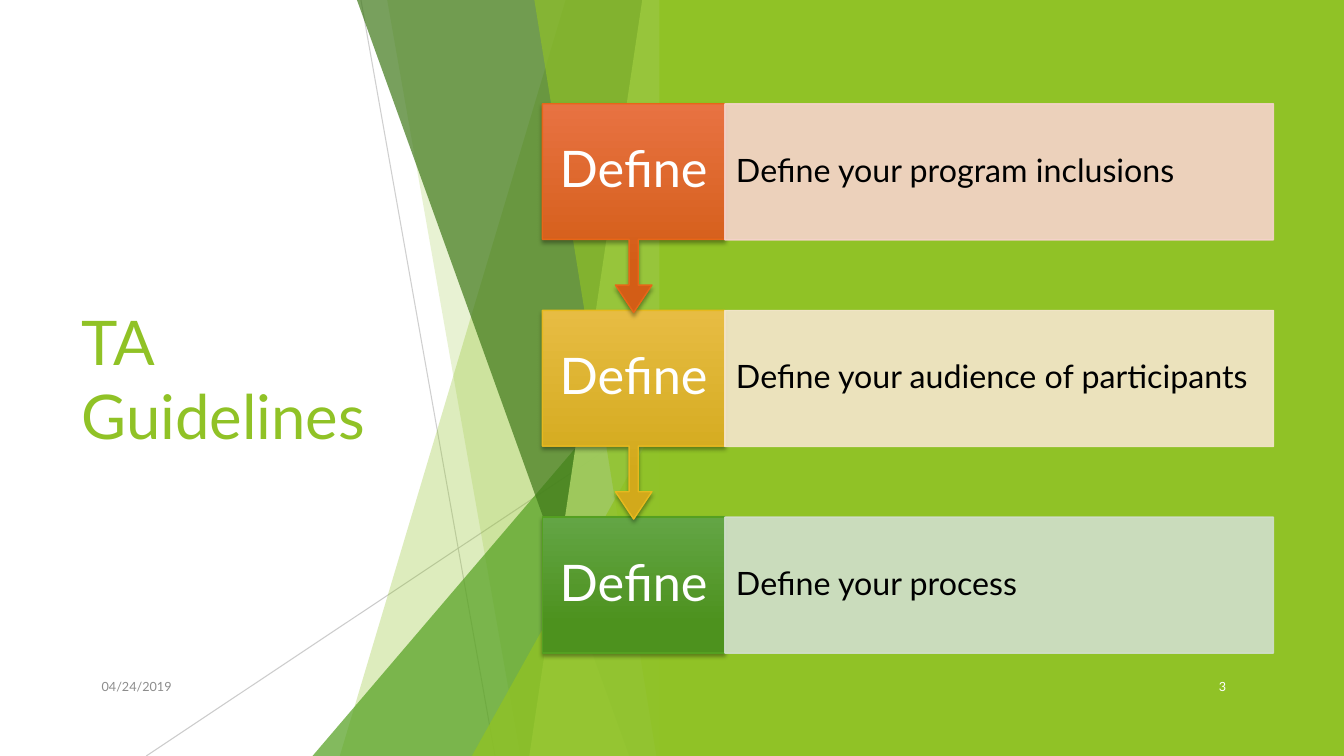
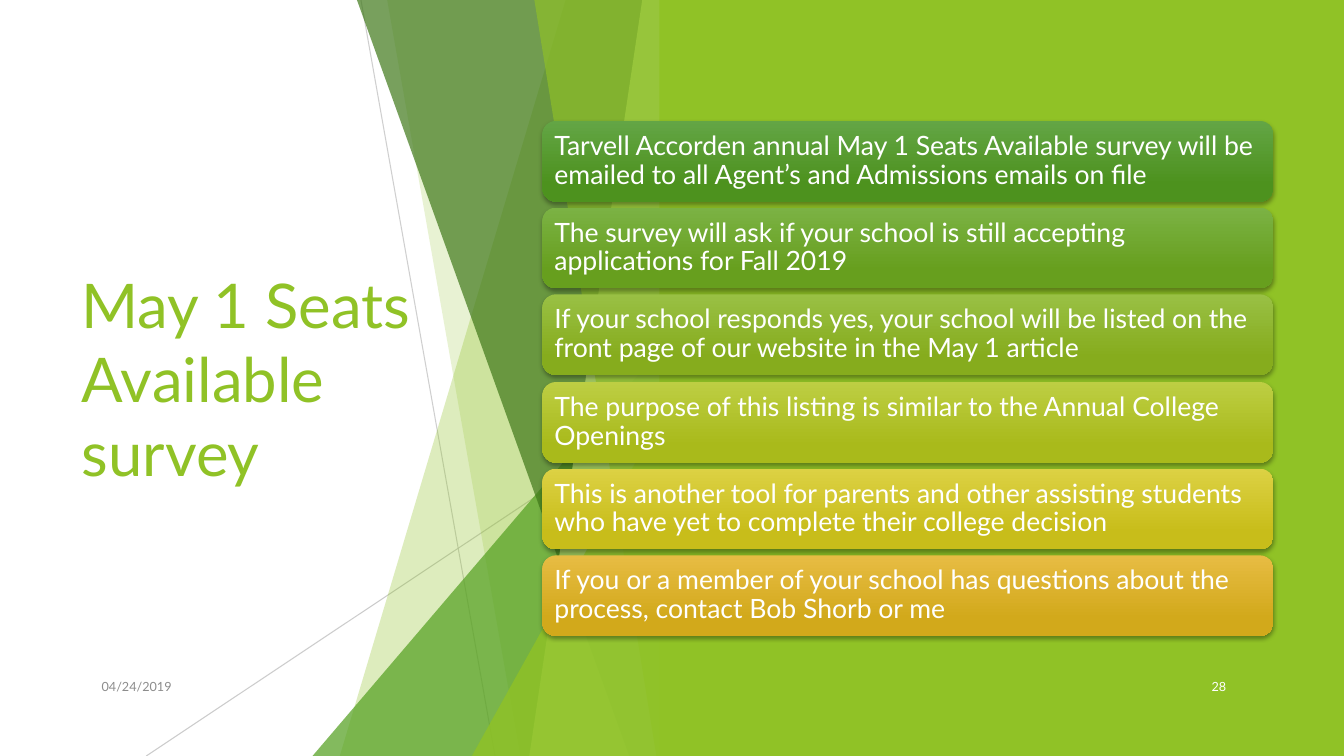
from dataclasses import dataclass

from lxml import etree
from pptx import Presentation
from pptx import util as u
from pptx.dml.color import RGBColor
from pptx.enum import shapes, text
from pptx.oxml.ns import qn
from pptx.shapes.base import BaseShape
from pptx.slide import Slide
from pptx.text.text import TextFrame

PX = 9144  # EMU per px, 100 px to the inch
WIDTH, HEIGHT = 1333, 750
FONT = "Lato"
TITLE_ONLY = 5

WHITE = RGBColor(0xFF, 0xFF, 0xFF)
BLACK = RGBColor(0x00, 0x00, 0x00)
LIME = RGBColor(0x90, 0xC2, 0x26)
LEAF = RGBColor(0x54, 0xA0, 0x21)
FOREST = RGBColor(0x3F, 0x78, 0x19)
PALE_LIME = RGBColor(0xC0, 0xE4, 0x74)
SILVER = RGBColor(0xBF, 0xBF, 0xBF)
GREY = RGBColor(0x8C, 0x8C, 0x8C)

Gradient = tuple[RGBColor, RGBColor]
GREEN_GRADIENT = (RGBColor(0x63, 0xA5, 0x45), RGBColor(0x4D, 0x92, 0x1E))
GRASS_GRADIENT = (RGBColor(0x7B, 0xB2, 0x44), RGBColor(0x67, 0x9F, 0x1E))
LIME_GRADIENT = (RGBColor(0x99, 0xC0, 0x44), RGBColor(0x86, 0xAC, 0x1D))
OLIVE_GRADIENT = (RGBColor(0xBD, 0xCE, 0x43), RGBColor(0xA9, 0xBA, 0x1B))
YELLOW_GRADIENT = (RGBColor(0xDC, 0xD1, 0x43), RGBColor(0xC8, 0xBD, 0x1A))
GOLD_GRADIENT = (RGBColor(0xE7, 0xBC, 0x43), RGBColor(0xD2, 0xA9, 0x1B))
ORANGE_GRADIENT = (RGBColor(0xE8, 0x72, 0x42), RGBColor(0xD3, 0x5D, 0x16))


@dataclass(frozen=True)
class Box:
    left: int
    top: int
    width: int
    height: int

    def emu(self) -> tuple[int, int, int, int]:
        return self.left * PX, self.top * PX, self.width * PX, self.height * PX


@dataclass(frozen=True)
class Ray:
    start: tuple[int, int]
    end: tuple[int, int]
    opacity: int


@dataclass(frozen=True)
class Facet:
    """A full-height band with a slanted left edge and a straight right edge."""
    top_left: int
    bottom_left: int
    color: RGBColor
    opacity: int


@dataclass(frozen=True)
class Wedge:
    """A right triangle whose upright side is on the right."""
    box: Box
    color: RGBColor
    opacity: int


@dataclass(frozen=True)
class Step:
    label: str
    detail: str
    gradient: Gradient
    border: RGBColor
    tint: RGBColor


@dataclass(frozen=True)
class Note:
    message: str
    gradient: Gradient


TITLE_BOX = Box(71, 151, 385, 448)
DATE_BOX = Box(80, 661, 100, 40)
NUMBER_BOX = Box(1151, 661, 75, 40)
GREEN_PANEL = Box(654, 0, WIDTH - 654, HEIGHT)
FACET_RIGHT = 666
RAYS = [Ray((358, 0), (491, HEIGHT), 75), Ray((666, 403), (145, HEIGHT), 80)]
FACETS = [
    Facet(561, 337, LIME, 30),
    Facet(384, 516, LIME, 20),
    Wedge(Box(310, 333, 356, 417), LEAF, 72),
    Facet(354, 624, FOREST, 70),
    Facet(637, 525, PALE_LIME, 70),
    Facet(530, 651, LIME, 65),
    Wedge(Box(468, 393, 199, 357), LIME, 80),
]

CONTENT_LEFT, CONTENT_WIDTH = 538, 725
STEP_TOP, STEP_PITCH, STEP_HEIGHT = 103, 205, 135
LABEL_WIDTH, CALLOUT_HEIGHT = 181, 207
CALLOUT_ADJUSTMENTS = (0.05, 0.1, 0.15, 0.65)
NOTE_TOP, NOTE_PITCH, NOTE_HEIGHT = 120, 86.2, 80

STEPS = [
    Step("Define", "Define your program inclusions", ORANGE_GRADIENT,
         RGBColor(0xE7, 0x66, 0x18), RGBColor(0xF6, 0xD3, 0xCC)),
    Step("Define", "Define your audience of participants", GOLD_GRADIENT,
         RGBColor(0xE6, 0xB9, 0x1E), RGBColor(0xF5, 0xE6, 0xCD)),
    Step("Define", "Define your process", GREEN_GRADIENT,
         LEAF, RGBColor(0xD1, 0xDF, 0xCD)),
]
NOTES = [
    Note("Tarvell Accorden annual May 1 Seats Available survey will be emailed "
         "to all Agent’s and Admissions emails on file", GREEN_GRADIENT),
    Note("The survey will ask if your school is still accepting applications "
         "for Fall 2019", GRASS_GRADIENT),
    Note("If your school responds yes, your school will be listed on the front "
         "page of our website in the May 1 article", LIME_GRADIENT),
    Note("The purpose of this listing is similar to the Annual College Openings",
         OLIVE_GRADIENT),
    Note("This is another tool for parents and other assisting students who "
         "have yet to complete their college decision", YELLOW_GRADIENT),
    Note("If you or a member of your school has questions about the process, "
         "contact Bob Shorb or me", GOLD_GRADIENT),
]


def write(frame: TextFrame, content: str, *, size: int, color: RGBColor,
          align: text.PP_ALIGN = text.PP_ALIGN.LEFT, spacing: float = 1.0,
          insets: tuple[int, int] = (10, 5)) -> None:
    """Fill a frame with one paragraph; insets are horizontal and vertical px."""
    frame.word_wrap = True
    frame.auto_size = text.MSO_AUTO_SIZE.NONE
    frame.vertical_anchor = text.MSO_ANCHOR.MIDDLE
    frame.margin_left = frame.margin_right = insets[0] * PX
    frame.margin_top = frame.margin_bottom = insets[1] * PX
    paragraph = frame.paragraphs[0]
    paragraph.alignment = align
    paragraph.line_spacing = spacing
    run = paragraph.add_run()
    run.text = content
    run.font.name = FONT
    run.font.size = u.Pt(size)
    run.font.color.rgb = color


def set_opacity(shape: BaseShape, percent: int) -> None:
    """Make the fill and line colours of a shape translucent."""
    for color in shape._element.spPr.iter(qn("a:srgbClr")):
        etree.SubElement(color, qn("a:alpha")).set("val", str(percent * 1000))


def add_soft_shadow(shape: BaseShape) -> None:
    effects = shape._element.spPr.find(qn("a:effectLst"))
    shadow = etree.SubElement(effects, qn("a:outerShdw"), blurRad=str(u.Pt(3)),
                              dist=str(u.Pt(2)), dir="5400000", rotWithShape="0")
    color = etree.SubElement(shadow, qn("a:srgbClr"), val=str(BLACK))
    etree.SubElement(color, qn("a:alpha"), val="35000")


def paint(shape: BaseShape, color: RGBColor, *, opacity: int = 100,
          border: RGBColor | None = None) -> None:
    shape.shadow.inherit = False
    shape.fill.solid()
    shape.fill.fore_color.rgb = color
    set_border(shape, border)
    if opacity < 100:
        set_opacity(shape, opacity)


def paint_gradient(shape: BaseShape, gradient: Gradient,
                   border: RGBColor | None = None) -> None:
    shape.shadow.inherit = False
    shape.fill.gradient()
    shape.fill.gradient_angle = 270
    for stop, color, position in zip(shape.fill.gradient_stops, gradient, (0, 0.78)):
        stop.color.rgb = color
        stop.position = position
    set_border(shape, border)
    add_soft_shadow(shape)


def set_border(shape: BaseShape, color: RGBColor | None) -> None:
    if color is None:
        shape.line.fill.background()
    else:
        shape.line.color.rgb = color
        shape.line.width = u.Pt(1)


def add_ray(slide: Slide, ray: Ray) -> None:
    points = [value * PX for value in (*ray.start, *ray.end)]
    line = slide.shapes.add_connector(shapes.MSO_CONNECTOR.STRAIGHT, *points)
    line.line.color.rgb = SILVER
    line.line.width = u.Pt(0.75)
    set_opacity(line, ray.opacity)
    etree.SubElement(line._element.spPr, qn("a:effectLst"))


def add_facet(slide: Slide, facet: Facet | Wedge) -> None:
    if isinstance(facet, Wedge):
        shape = slide.shapes.add_shape(
            shapes.MSO_SHAPE.ISOSCELES_TRIANGLE, *facet.box.emu())
        shape.adjustments[0] = 1
    else:
        builder = slide.shapes.build_freeform(facet.top_left, 0, scale=PX)
        builder.add_line_segments([(FACET_RIGHT, 0), (FACET_RIGHT, HEIGHT),
                                   (facet.bottom_left, HEIGHT)])
        shape = builder.convert_to_shape()
    paint(shape, facet.color, opacity=facet.opacity)


def add_footer(slide: Slide, box: Box, content: str, color: RGBColor) -> None:
    footer = slide.shapes.add_textbox(*box.emu())
    write(footer.text_frame, content, size=9, color=color,
          align=text.PP_ALIGN.RIGHT)


def add_base_slide(presentation: Presentation, title: str, number: int) -> Slide:
    """Add a slide with the shared title, backdrop and footers."""
    slide = presentation.slides.add_slide(presentation.slide_layouts[TITLE_ONLY])
    heading = slide.shapes.title
    heading.left, heading.top, heading.width, heading.height = TITLE_BOX.emu()
    write(heading.text_frame, title, size=44, color=LIME)
    add_footer(slide, DATE_BOX, "04/24/2019", GREY)
    for ray in RAYS:
        add_ray(slide, ray)
    for facet in FACETS:
        add_facet(slide, facet)
    panel = slide.shapes.add_shape(shapes.MSO_SHAPE.RECTANGLE, *GREEN_PANEL.emu())
    paint(panel, LIME)
    add_footer(slide, NUMBER_BOX, str(number), WHITE)
    return slide


def add_step(slide: Slide, step: Step, top: int, is_last: bool) -> None:
    kind = shapes.MSO_SHAPE.RECTANGLE if is_last else shapes.MSO_SHAPE.DOWN_ARROW_CALLOUT
    height = STEP_HEIGHT if is_last else CALLOUT_HEIGHT
    label = slide.shapes.add_shape(
        kind, *Box(CONTENT_LEFT, top, LABEL_WIDTH, height).emu())
    if not is_last:
        for index, value in enumerate(CALLOUT_ADJUSTMENTS):
            label.adjustments[index] = value
    paint_gradient(label, step.gradient, step.border)
    write(label.text_frame, step.label, size=36, color=WHITE,
          align=text.PP_ALIGN.CENTER, spacing=0.9, insets=(13, 28))

    detail_box = Box(CONTENT_LEFT + LABEL_WIDTH, top,
                     CONTENT_WIDTH - LABEL_WIDTH, STEP_HEIGHT)
    detail = slide.shapes.add_shape(shapes.MSO_SHAPE.RECTANGLE, *detail_box.emu())
    paint(detail, step.tint, opacity=90, border=step.tint)
    write(detail.text_frame, step.detail, size=23, color=BLACK, spacing=0.9,
          insets=(11, 32))


def add_note(slide: Slide, note: Note, top: int) -> None:
    bar = slide.shapes.add_shape(
        shapes.MSO_SHAPE.ROUNDED_RECTANGLE,
        *Box(CONTENT_LEFT, top, CONTENT_WIDTH, NOTE_HEIGHT).emu())
    paint_gradient(bar, note.gradient)
    write(bar.text_frame, note.message, size=19, color=WHITE, spacing=0.9,
          insets=(8, 8))


def main() -> None:
    presentation = Presentation()
    presentation.slide_width = WIDTH * PX
    presentation.slide_height = HEIGHT * PX

    guidelines = add_base_slide(presentation, "TA Guidelines", 3)
    last = len(STEPS) - 1
    for index in range(last, -1, -1):  # upper arrows overlap the boxes below
        add_step(guidelines, STEPS[index], STEP_TOP + index * STEP_PITCH,
                 is_last=index == last)

    survey = add_base_slide(presentation, "May 1 Seats Available survey", 28)
    for index, note in enumerate(NOTES):
        add_note(survey, note, round(NOTE_TOP + index * NOTE_PITCH))

    presentation.save("out.pptx")


if __name__ == "__main__":
    main()
